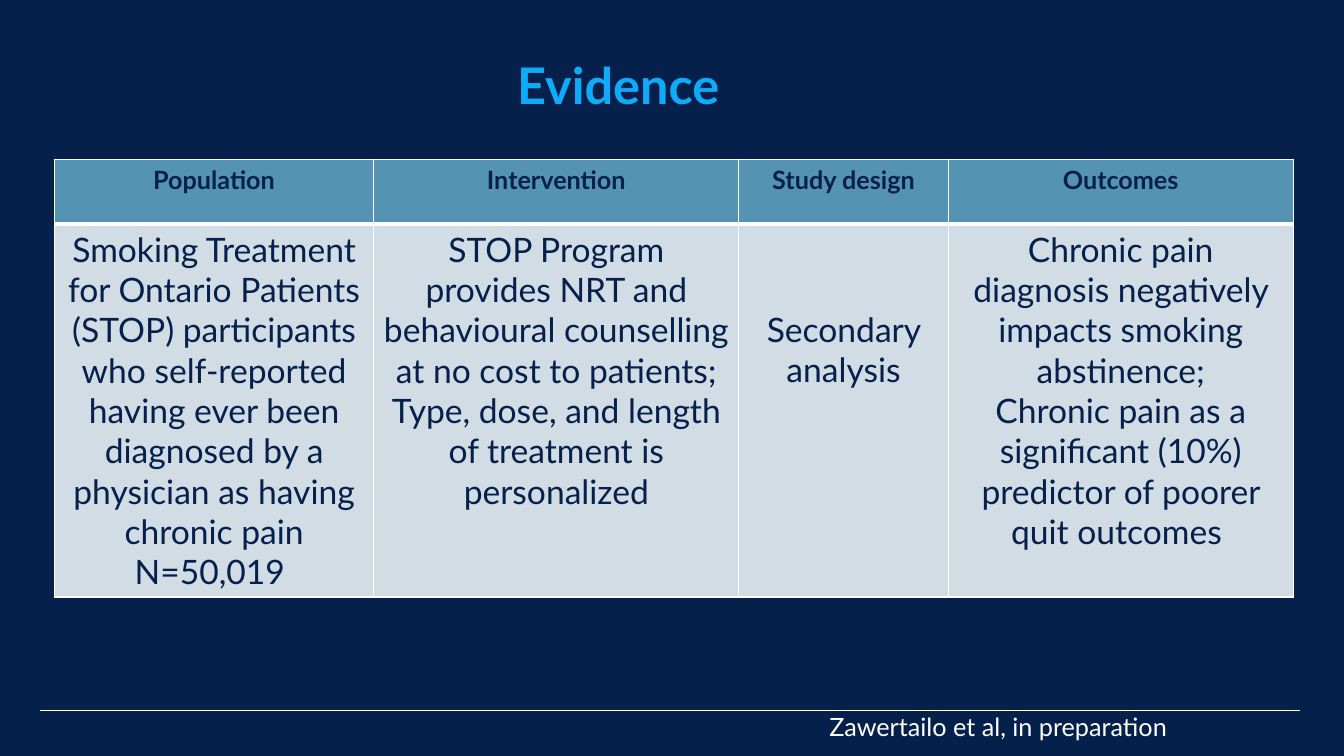
from dataclasses import dataclass

from lxml.etree import SubElement
from pptx import Presentation
from pptx.dml.color import RGBColor as RGB
from pptx.enum.shapes import MSO_CONNECTOR as CONN
from pptx.enum.text import MSO_ANCHOR as ANCHOR, PP_ALIGN as ALIGN
from pptx.oxml.ns import qn
from pptx.util import Cm, Pt

COLOURS = {
    "navy": "06204C",
    "blue": "0DABF8",
    "header": "5493B2",
    "body": "D1DCE4",
    "white": "FFFFFF",
}
FONT = "Lato"
ROW_HEIGHTS = (1.63, 9.4)
TOP_MARGIN = 0.13
RULE_Y = 17.91


@dataclass(frozen=True)
class Column:
    width: float
    heading: str
    lines: tuple[str, ...]
    body_margin: float = TOP_MARGIN


@dataclass(frozen=True)
class CellStyle:
    fill: str
    size: int
    bold: bool
    top: float
    bottom: float


HEADER = CellStyle("header", 18, True, top=1, bottom=3)
BODY = CellStyle("body", 24, False, top=3, bottom=1)

COLUMNS = (
    Column(8.05, "Population", (
        "Smoking Treatment for Ontario Patients (STOP) participants who "
        "self-reported having ever been diagnosed by a physician as having "
        "chronic pain",
        "N=50,019 ",
    )),
    Column(9.2, "Intervention", (
        "STOP Program provides NRT and behavioural counselling at no cost "
        "to patients;",
        "Type, dose, and length of treatment is personalized",
    )),
    Column(5.28, "Study design", ("Secondary analysis",), body_margin=2.16),
    Column(8.69, "Outcomes", (
        "Chronic pain diagnosis negatively impacts smoking abstinence;",
        "Chronic pain as a significant (10%) predictor of poorer quit outcomes ",
    )),
)


def rgb(name: str) -> RGB:
    return RGB.from_string(COLOURS[name])


def set_attrs(obj, values: dict) -> None:
    for name, value in values.items():
        setattr(obj, name, value)


def write(tf, lines: tuple[str, ...], colour: str, size: int,
          bold: bool = False, align=ALIGN.CENTER) -> None:
    for i, line in enumerate(lines):
        p = tf.add_paragraph() if i else tf.paragraphs[0]
        p.alignment = align
        r = p.add_run()
        r.text = line
        set_attrs(r.font, {"name": FONT, "size": Pt(size), "bold": bold})
        r.font.color.rgb = rgb(colour)


def add_borders(cell, style: CellStyle) -> None:
    """Draw white cell edges; call before filling, as edges precede the fill."""
    tc_pr = cell._tc.get_or_add_tcPr()
    edges = {"lnL": 1, "lnR": 1, "lnT": style.top, "lnB": style.bottom}
    for tag, width in edges.items():
        ln = SubElement(tc_pr, qn(f"a:{tag}"), w=str(Pt(width)))
        fill = SubElement(ln, qn("a:solidFill"))
        SubElement(fill, qn("a:srgbClr"), val=COLOURS["white"])


def format_cell(cell, lines: tuple[str, ...], style: CellStyle,
                margin_top: float = TOP_MARGIN) -> None:
    add_borders(cell, style)
    cell.fill.solid()
    cell.fill.fore_color.rgb = rgb(style.fill)
    set_attrs(cell, {"margin_top": Cm(margin_top),
                     "vertical_anchor": ANCHOR.TOP})
    write(cell.text_frame, lines, "navy", style.size, style.bold)


def add_evidence_table(s) -> None:
    width = sum(col.width for col in COLUMNS)
    frame = s.shapes.add_table(len(ROW_HEIGHTS), len(COLUMNS), Cm(1.37),
                               Cm(4.01), Cm(width), Cm(sum(ROW_HEIGHTS)))
    table = frame.table
    set_attrs(table, {"first_row": False, "horz_banding": False})
    for row, height in zip(table.rows, ROW_HEIGHTS):
        row.height = Cm(height)
    for i, col in enumerate(COLUMNS):
        table.columns[i].width = Cm(col.width)
        format_cell(table.cell(0, i), (col.heading,), HEADER)
        format_cell(table.cell(1, i), col.lines, BODY, col.body_margin)


def add_footer_rule(s) -> None:
    rule = s.shapes.add_connector(CONN.STRAIGHT, Cm(1.02), Cm(RULE_Y),
                                  Cm(32.77), Cm(RULE_Y))
    rule.line.color.rgb = rgb("white")
    rule.line.width = Pt(0.75)
    SubElement(rule._element.spPr, qn("a:effectLst"))


def add_title(s) -> None:
    sp = s.shapes.title
    set_attrs(sp, {"left": Cm(1.37), "top": Cm(1.27),
                   "width": Cm(28.73), "height": Cm(1.73)})
    set_attrs(sp.text_frame, {
        "margin_left": 0, "margin_right": 0, "margin_top": Cm(0.03),
        "margin_bottom": Cm(0.03), "vertical_anchor": ANCHOR.MIDDLE,
    })
    write(sp.text_frame, ("Evidence ",), "blue", 36, bold=True)


def add_citation(s) -> None:
    sp = s.shapes.add_textbox(Cm(20.65), Cm(17.81), Cm(13.2), Cm(1.02))
    sp.text_frame.word_wrap = True
    write(sp.text_frame, ("Zawertailo et al, in preparation",), "white", 18,
          align=ALIGN.LEFT)


def main() -> None:
    prs = Presentation()
    set_attrs(prs, {"slide_width": Cm(33.87), "slide_height": Cm(19.05)})
    s = prs.slides.add_slide(prs.slide_layouts.get_by_name("Title Only"))
    s.background.fill.solid()
    s.background.fill.fore_color.rgb = rgb("navy")
    add_footer_rule(s)
    add_evidence_table(s)
    add_title(s)
    add_citation(s)
    prs.save("out.pptx")


if __name__ == "__main__":
    main()
